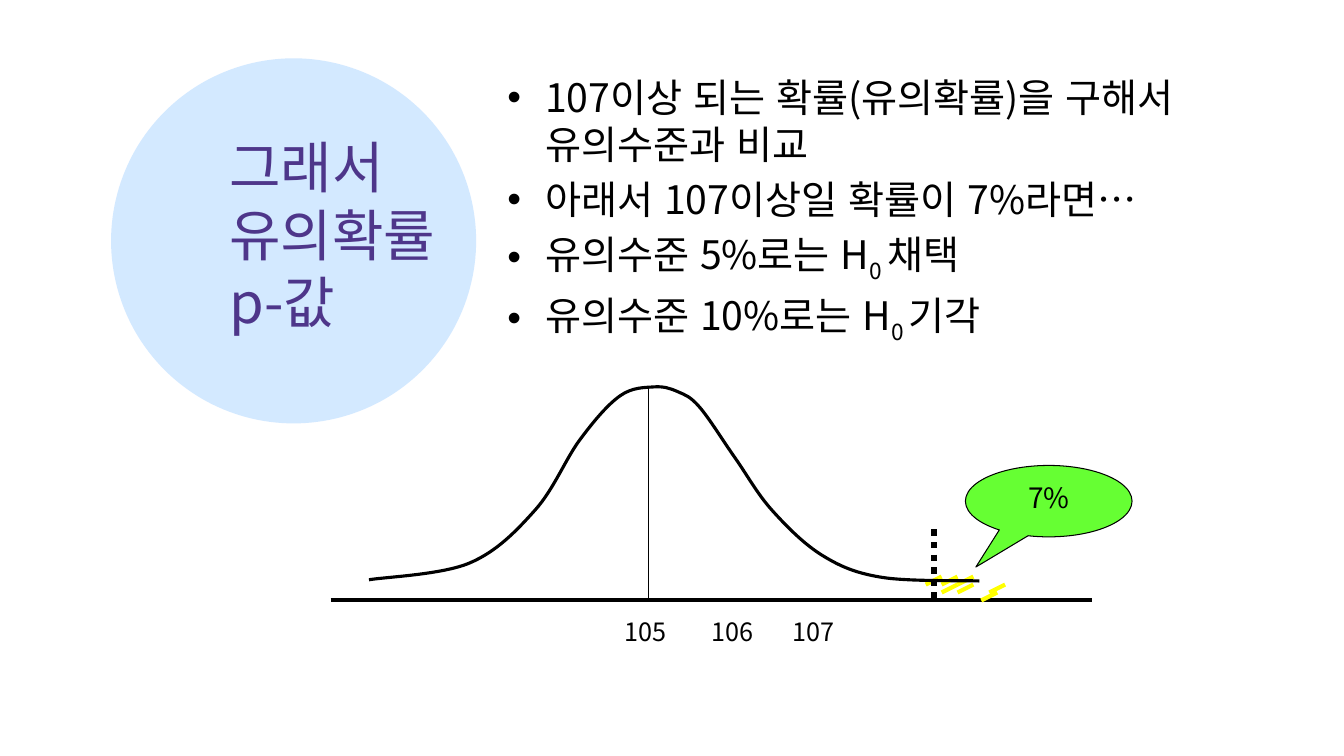
from lxml import etree
from pptx import Presentation
from pptx.dml.color import RGBColor
from pptx.enum.dml import MSO_LINE
from pptx.enum.lang import MSO_LANGUAGE_ID
from pptx.enum.shapes import MSO_CONNECTOR, MSO_SHAPE
from pptx.enum.text import MSO_ANCHOR, PP_ALIGN
from pptx.oxml.ns import qn
from pptx.util import Cm, Pt

FONT = "Noto Sans CJK KR"
BLACK = RGBColor(0x00, 0x00, 0x00)
PURPLE = RGBColor(0x4E, 0x36, 0x8A)
SKY = RGBColor(0x99, 0xCC, 0xFF)
YELLOW = RGBColor(0xFF, 0xFF, 0x00)
GREEN = RGBColor(0x66, 0xFF, 0x33)

BULLETS = [
    ["107이상 되는 확률(유의확률)을 구해서 유의수준과 비교"],
    ["아래서 107이상일 확률이 7%라면", "…"],
    ["유의수준 5%로는 H", "0 ", "채택"],
    ["유의수준 10%로는 H", "0 ", "기각"],
]
# Bell curve knots in cm from the left end of the axis and the peak
CURVE = [(0.97, 4.88), (3.5, 4.46), (5.16, 3.12), (6.28, 1.36), (7.29, 0.25),
         (8.15, 0.02), (8.75, 0.14), (9.3, 0.53), (10.19, 1.8), (11.12, 3.12),
         (12.4, 4.27), (13.9, 4.82), (16.35, 4.91)]
# Hatch strokes as (column, row) steps
HATCH = [(0, 0), (1, 0), (1, 1), (2, 1), (3.5, 2), (4, 1), (2, 0)]


def format_run(r, size, color=BLACK, font=FONT):
    r.font.size = Pt(size)
    r.font.name = font
    r.font.color.rgb = color
    r.font.language_id = MSO_LANGUAGE_ID.KOREAN
    ea = etree.SubElement(r.font._element, qn("a:ea"))
    ea.set("typeface", FONT)


def add_text(s, x, y, w, h, text, size, color=BLACK, wrap=True):
    tb = s.shapes.add_textbox(Cm(x), Cm(y), Cm(w), Cm(h))
    tf = tb.text_frame
    tf.word_wrap = wrap
    tf.text = text
    for r in tf.paragraphs[0].runs:
        format_run(r, size, color)
    return tf


def add_line(s, x1, y1, x2, y2, color, width):
    line = s.shapes.add_connector(MSO_CONNECTOR.STRAIGHT, Cm(x1), Cm(y1), Cm(x2), Cm(y2))
    line.line.color.rgb = color
    line.line.width = Pt(width)
    etree.SubElement(line._element.spPr, qn("a:effectLst"))
    return line


def add_smooth_curve(s, knots):
    """Open freeform whose segments become Bezier arcs through the knots."""
    fb = s.shapes.build_freeform(*[Cm(v) for v in knots[0]])
    fb.add_line_segments([(Cm(px), Cm(py)) for px, py in knots[1:]], close=False)
    curve = fb.convert_to_shape()
    left, top = min(k[0] for k in knots), min(k[1] for k in knots)
    segments = list(curve._element.iter(qn("a:lnTo")))
    ends = [knots[0]] + knots + [knots[-1]]
    for seg, a, b, c, d in zip(segments, ends, ends[1:], ends[2:], ends[3:]):
        seg.tag = qn("a:cubicBezTo")
        seg.remove(seg[0])
        lead = [q + (u - p) / 6 for p, q, u in zip(a, b, c)]
        trail = [u - (v - q) / 6 for q, u, v in zip(b, c, d)]
        for px, py in (lead, trail, c):
            pt = etree.SubElement(seg, qn("a:pt"))
            pt.set("x", str(Cm(px - left)))
            pt.set("y", str(Cm(py - top)))
    return curve


def add_title(s, x, y, size):
    # Translucent disc
    disc = s.shapes.add_shape(MSO_SHAPE.OVAL, Cm(x), Cm(y), Cm(size), Cm(size))
    disc.shadow.inherit = False
    disc.fill.solid()
    disc.fill.fore_color.rgb = SKY
    disc.line.fill.background()
    clr = disc._element.spPr.find(qn("a:solidFill")).find(qn("a:srgbClr"))
    etree.SubElement(clr, qn("a:alpha")).set("val", "43000")
    # Heading
    tf = add_text(s, x + 2.73, y + 0.43, 7, 7.98, "", 40)
    tf.vertical_anchor = MSO_ANCHOR.MIDDLE
    p = tf.paragraphs[0]
    p.text = "그래서\v유의확률\vp-값"
    for r in p.runs:
        format_run(r, 40, PURPLE)


def add_bullets(s, x, y, w, h):
    tf = add_text(s, x, y, w, h, "", 28)
    for i, parts in enumerate(BULLETS):
        p = tf.add_paragraph() if i else tf.paragraphs[0]
        pPr = p._p.get_or_add_pPr()
        pPr.set("marL", str(Cm(0.95)))
        pPr.set("indent", str(-Cm(0.95)))
        p.space_before = Pt(5.6)
        bu_font = etree.SubElement(pPr, qn("a:buFont"))
        bu_font.set("typeface", "Arial")
        etree.SubElement(pPr, qn("a:buChar")).set("char", "•")
        for part in parts:
            r = p.add_run()
            r.text = part
            format_run(r, 28, font="Arial" if part == "…" else FONT)
            if part == "0 ":
                r.font._element.set("baseline", "-25000")


def add_distribution(s, x, y, w, h):
    # Axis with its labels on tab stops
    add_line(s, x, y + h, x + w, y + h, BLACK, 3)
    tf = add_text(s, x + 7.16, y + h + 0.29, 8.86, 1.02, "105\t106\t107", 18, wrap=False)
    tabs = etree.SubElement(tf.paragraphs[0]._p.get_or_add_pPr(), qn("a:tabLst"))
    for pos in (2.2, 4.24):
        tab = etree.SubElement(tabs, qn("a:tab"))
        tab.set("pos", str(Cm(pos)))
        tab.set("algn", "l")
    # Mean line
    add_line(s, x + 8.01, y, x + 8.01, y + h, BLACK, 0.75)
    # Hatched tail
    for col, row in HATCH:
        hx, hy = x + 15.4 + 0.4 * col, y + 4.8 + 0.2 * row
        add_line(s, hx, hy, hx - 0.4, hy + 0.2, YELLOW, 3)
    # Critical value: thin tick and dotted line
    add_line(s, x + 15.21, y + 5.2, x + 15.21, y + h, BLACK, 0.75)
    cut = add_line(s, x + 15.21, y + 3.61, x + 15.21, y + h, BLACK, 4.5)
    cut.line.dash_style = MSO_LINE.ROUND_DOT
    # Callout
    call = s.shapes.add_shape(MSO_SHAPE.OVAL_CALLOUT, Cm(x + 16), Cm(y + 2), Cm(4.2), Cm(1.8))
    call.shadow.inherit = False
    call.adjustments[0], call.adjustments[1] = -0.437, 0.922
    call.fill.solid()
    call.fill.fore_color.rgb = GREEN
    call.line.color.rgb = BLACK
    call.line.width = Pt(0.75)
    tf = call.text_frame
    tf.vertical_anchor = MSO_ANCHOR.TOP
    tf.text = "7%"
    p = tf.paragraphs[0]
    p.alignment = PP_ALIGN.CENTER
    format_run(p.runs[0], 20)
    # Bell curve
    bell = add_smooth_curve(s, [(x + px, y + py) for px, py in CURVE])
    bell.shadow.inherit = False
    bell.fill.background()
    bell.line.color.rgb = BLACK
    bell.line.width = Pt(2.25)


def main():
    prs = Presentation()
    prs.slide_width, prs.slide_height = Cm(33.87), Cm(19.05)
    s = prs.slides.add_slide(prs.slide_layouts[6])
    add_title(s, 2.8, 1.47, 9.2)
    add_bullets(s, 12.54, 1.72, 18, 7.98)
    add_distribution(s, 8.33, 9.73, 19.2, 5.38)
    prs.save("out.pptx")


if __name__ == "__main__":
    main()
